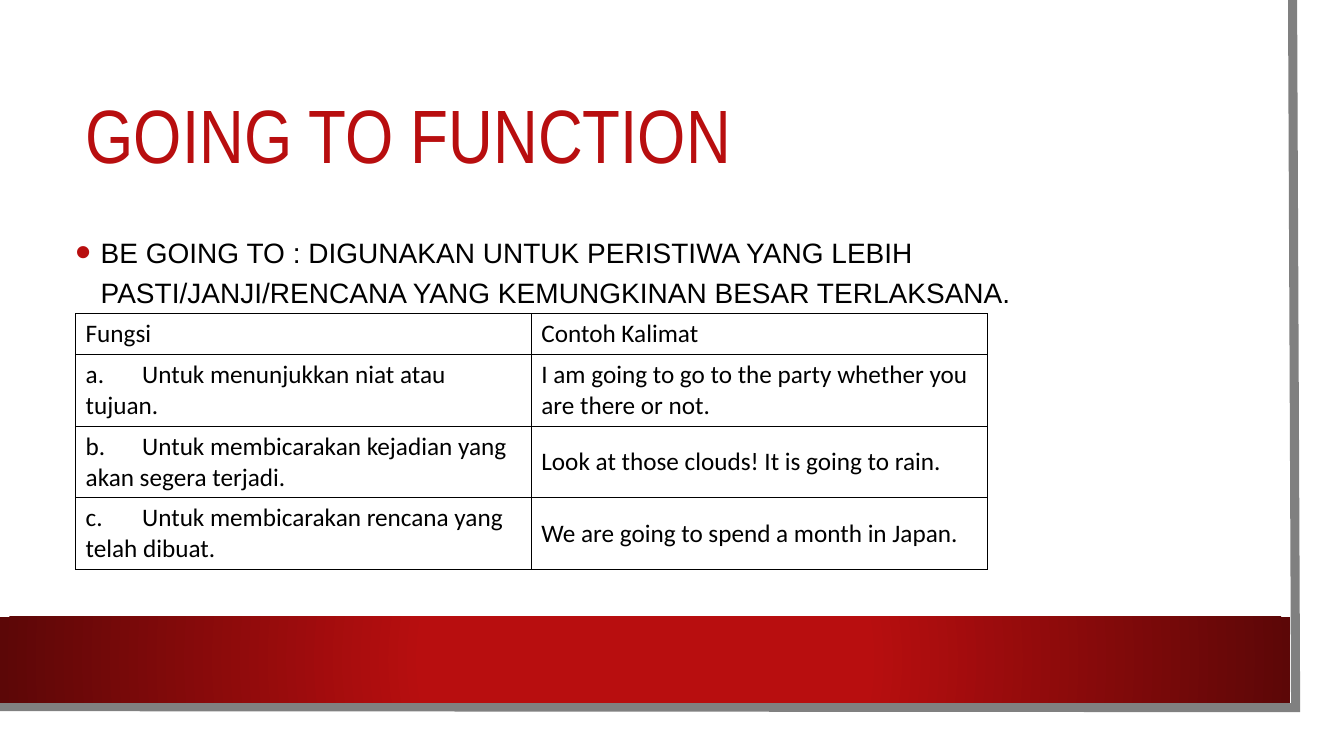
from lxml.etree import SubElement
from pptx import Presentation
from pptx.dml.color import RGBColor
from pptx.enum.shapes import MSO_SHAPE
from pptx.enum.text import MSO_ANCHOR, MSO_AUTO_SIZE, PP_ALIGN
from pptx.oxml import parse_xml
from pptx.oxml.ns import nsdecls, qn
from pptx.util import Inches, Pt

COLORS = {"red": "B80E0F", "dark_red": "5C0707", "gray": "808080",
          "white": "FFFFFF", "black": "000000"}


def format_font(para, name, size, color):
    for span in para.runs:
        span.font.name = name
        span.font.size = Pt(size)
        span.font.color.rgb = RGBColor.from_string(COLORS[color])


deck = Presentation()
deck.slide_width, deck.slide_height = Inches(13.33), Inches(7.5)
page = deck.slides.add_slide(deck.slide_layouts[5])
title = page.shapes.title

# White sheet
sheet = page.shapes.add_shape(MSO_SHAPE.RECTANGLE, 0, 0, Inches(13.1), Inches(7.27))
sheet.shadow.inherit = False
sheet.fill.solid()
sheet.fill.fore_color.rgb = RGBColor.from_string(COLORS["white"])
sheet.line.fill.background()

# Gray edge along the right and bottom
builder = page.shapes.build_freeform(Inches(12.82), 0)
builder.add_line_segments([(Inches(12.85), Inches(7.02)),
                           (Inches(-0.03), Inches(7.01))], close=False)
edge = builder.convert_to_shape()
edge.shadow.inherit = False
edge.fill.background()
edge.line.color.rgb = RGBColor.from_string(COLORS["gray"])
edge.line.width = Pt(6.5)
SubElement(edge.line._get_or_add_ln(), qn("a:miter"), lim="800000")

# Red band with a circular gradient
band = page.shapes.add_shape(MSO_SHAPE.RECTANGLE, 0, Inches(6.12), Inches(12.8), Inches(0.85))
band.shadow.inherit = False
band.line.fill.background()
band_fill = parse_xml(
    f'<a:gradFill {nsdecls("a")} rotWithShape="1"><a:gsLst>'
    f'<a:gs pos="34000"><a:srgbClr val="{COLORS["red"]}"/></a:gs>'
    f'<a:gs pos="100000"><a:srgbClr val="{COLORS["dark_red"]}"/></a:gs></a:gsLst>'
    '<a:path path="circle"><a:fillToRect l="50000" t="50000" r="50000" b="50000"/></a:path>'
    '</a:gradFill>')
band._element.spPr.find(qn("a:prstGeom")).addnext(band_fill)

# Title, brought in front of the background
page.shapes._spTree.append(title._element)
title.left, title.top = Inches(0.75), Inches(0.75)
title.width, title.height = Inches(11.37), Inches(1.26)
title.text_frame.text = "GOING TO FUNCTION"
title.text_frame.auto_size = MSO_AUTO_SIZE.NONE
title.text_frame.vertical_anchor = MSO_ANCHOR.MIDDLE
para = title.text_frame.paragraphs[0]
para.alignment = PP_ALIGN.LEFT
para.line_spacing = 0.9
format_font(para, "Arial Narrow", 54, "red")

# Bulleted explanation
box = page.shapes.add_textbox(Inches(0.65), Inches(2.22), Inches(11.37), Inches(0.9))
box.text_frame.word_wrap = True
para = box.text_frame.paragraphs[0]
para.text = ("BE GOING TO : DIGUNAKAN UNTUK PERISTIWA YANG LEBIH "
             "PASTI/JANJI/RENCANA YANG KEMUNGKINAN BESAR TERLAKSANA.")
para.line_spacing = 1.2
properties = para._p.get_or_add_pPr()
properties.set("marL", str(Inches(0.25)))
properties.set("indent", str(Inches(-0.25)))
bullet_color = SubElement(properties, qn("a:buClr"))
SubElement(bullet_color, qn("a:srgbClr"), val=COLORS["red"])
SubElement(properties, qn("a:buSzPct"), val="160000")
SubElement(properties, qn("a:buFont"), typeface="Arial")
SubElement(properties, qn("a:buChar"), char="•")
format_font(para, "Arial", 20, "black")

# Table of functions and examples
ROWS = [
    ("Fungsi", "Contoh Kalimat"),
    ("a.\tUntuk menunjukkan niat atau tujuan.",
     "I am going to go to the party whether you are there or not."),
    ("b.\tUntuk membicarakan kejadian yang akan segera terjadi.",
     "Look at those clouds! It is going to rain."),
    ("c.\tUntuk membicarakan rencana yang telah dibuat.",
     "We are going to spend a month in Japan."),
]
table = page.shapes.add_table(len(ROWS), 2, Inches(0.75), Inches(3.11),
                              Inches(9.04), Inches(2.54)).table
table.first_row = table.horz_banding = False
for row_index, texts in enumerate(ROWS):
    table.rows[row_index].height = Inches(0.71 if row_index else 0.41)
    for column_index, text in enumerate(texts):
        cell = table.cell(row_index, column_index)
        cell.fill.background()
        cell.vertical_anchor = MSO_ANCHOR.MIDDLE
        para = cell.text_frame.paragraphs[0]
        para.text = text
        if "\t" in text:
            tabs = SubElement(para._p.get_or_add_pPr(), qn("a:tabLst"))
            SubElement(tabs, qn("a:tab"), pos=str(Inches(0.56)), algn="l")
        format_font(para, "Calibri", 18, "black")
        for position, side in enumerate(("lnL", "lnR", "lnT", "lnB")):
            border = parse_xml(
                f'<a:{side} {nsdecls("a")} w="{Pt(0.75)}"><a:solidFill>'
                f'<a:srgbClr val="{COLORS["black"]}"/></a:solidFill></a:{side}>')
            cell._tc.get_or_add_tcPr().insert(position, border)

deck.save("out.pptx")
